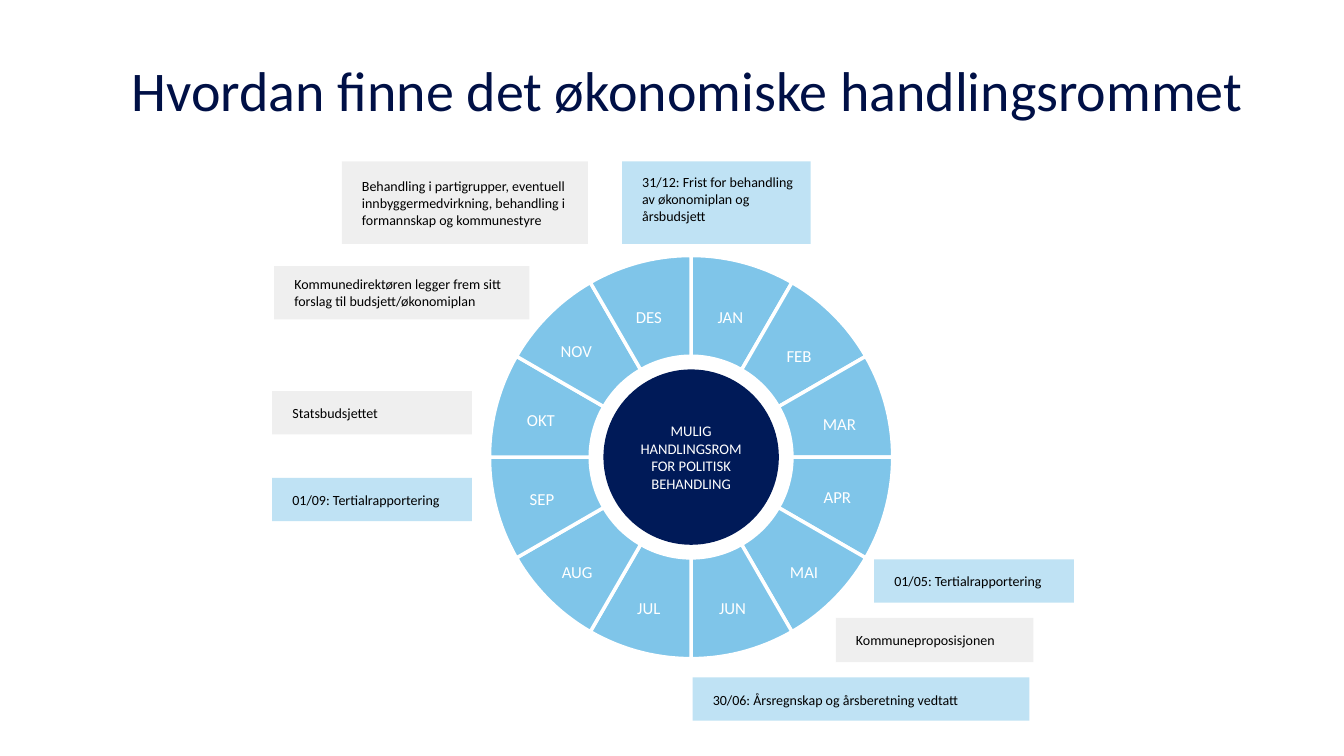
from math import cos, sin, radians

from lxml.etree import SubElement
from pptx import Presentation
from pptx.dml.color import RGBColor
from pptx.enum.shapes import MSO_SHAPE
from pptx.enum.text import MSO_ANCHOR, MSO_AUTO_SIZE, PP_ALIGN
from pptx.oxml.ns import qn
from pptx.util import Pt

PX = 9144  # 100 px to the inch
FONT = "Calibri"
COLORS = {
    "title": "001046", "core": "001A58", "wedge": "7FC5E9",
    "date": "BFE2F4", "step": "D9D9D9", "white": "FFFFFF", "black": "000000",
}

TITLE = "Hvordan finne det økonomiske handlingsrommet"
CORE = "MULIG HANDLINGSROM FOR POLITISK BEHANDLING"

# Month, left and top of its label, clockwise from the top of the wheel
MONTHS = [
    ("JAN", 687, 299), ("FEB", 755, 338), ("MAR", 795, 406),
    ("APR", 793, 478), ("MAI", 760, 552), ("JUN", 689, 588),
    ("JUL", 606, 588), ("AUG", 535, 552), ("SEP", 500, 480),
    ("OKT", 499, 402), ("NOV", 534, 333), ("DES", 606, 299),
]

# Text, fill, box, anchor, top inset, bottom inset
MID = (MSO_ANCHOR.MIDDLE, 5, 5)
NOTES = [
    ("01/05: Tertialrapportering", "date", (867, 555, 198, 43), MID),
    ("Statsbudsjettet", "step", (270, 388, 198, 43), MID),
    ("01/09: Tertialrapportering", "date", (270, 474, 198, 43), MID),
    ("31/12: Frist for behandling av økonomiplan og årsbudsjett",
     "date", (617, 160, 187, 82), (MSO_ANCHOR.TOP, 12, 5)),
    ("Kommunedirektøren legger frem sitt forslag til budsjett/økonomiplan",
     "step", (272, 264, 253, 53), MID),
    ("Behandling i partigrupper, eventuell innbyggermedvirkning, "
     "behandling i formannskap og kommunestyre",
     "step", (339, 160, 244, 82), MID),
    ("Kommuneproposisjonen", "step", (829, 613, 196, 44), MID),
    ("30/06: Årsregnskap og årsberetning vedtatt",
     "date", (687, 672, 334, 43), (MSO_ANCHOR.BOTTOM, 5, 12)),
]

HUB = (685.5, 453.5)
INNER, OUTER, DISC = 100, 200, 87
STEP = 360 // len(MONTHS)


def emu(*vals):
    return [round(v * PX) for v in vals]


def rgb(name):
    return RGBColor.from_string(COLORS[name])


def write(shape, text, size, color, align=PP_ALIGN.LEFT,
          anchor=MSO_ANCHOR.MIDDLE, inset=(10, 5, 10, 5), space=None,
          fit=MSO_AUTO_SIZE.NONE):
    """Put one formatted paragraph in a shape; inset is left, top, right, bottom."""
    frame = shape.text_frame
    frame.word_wrap = True
    frame.auto_size = fit
    frame.vertical_anchor = anchor
    (frame.margin_left, frame.margin_top,
     frame.margin_right, frame.margin_bottom) = emu(*inset)
    para = frame.paragraphs[0]
    para.alignment = align
    if space:
        para.line_spacing = space
    run = para.add_run()
    run.text = text
    run.font.name = FONT
    run.font.size = Pt(size)
    run.font.color.rgb = rgb(color)


def paint(shape, fill, line=None, alpha=None):
    shape.shadow.inherit = False
    shape.fill.solid()
    shape.fill.fore_color.rgb = rgb(fill)
    if alpha:
        tint = shape.fill._xPr.find(qn("a:solidFill"))[0]
        SubElement(tint, qn("a:alpha")).set("val", str(alpha * 1000))
    if line:
        shape.line.color.rgb = rgb(line)
        shape.line.width = Pt(2.5)
    else:
        shape.line.fill.background()


def spot(angle, radius):
    """Point on the wheel, angle clockwise from the top."""
    turn = radians(angle)
    return tuple(emu(HUB[0] + radius * sin(turn), HUB[1] - radius * cos(turn)))


def add_wedge(shapes, start):
    arc = range(start, start + STEP + 1, 2)
    points = [spot(a, OUTER) for a in arc]
    points += [spot(a, INNER) for a in reversed(arc)]
    form = shapes.build_freeform(*points[0], scale=1.0)
    form.add_line_segments(points[1:], close=True)
    paint(form.convert_to_shape(), "wedge", line="white")


def main():
    deck = Presentation()
    deck.slide_width, deck.slide_height = emu(1333, 750)
    slide = deck.slides.add_slide(deck.slide_layouts[5])
    shapes = slide.shapes

    title = shapes.title
    title.left, title.top, title.width, title.height = emu(59, 20, 1245, 145)
    write(title, TITLE, 40, "title", align=PP_ALIGN.CENTER, space=0.9)

    for text, fill, box, (anchor, top, bottom) in NOTES:
        note = shapes.add_shape(MSO_SHAPE.RECTANGLE, *emu(*box))
        paint(note, fill, alpha=40 if fill == "step" else None)
        write(note, text, 10, "black", anchor=anchor,
              inset=(20, top, 10, bottom))

    for i in range(len(MONTHS)):
        add_wedge(shapes, i * STEP)
    for month, left, top in MONTHS:
        label = shapes.add_textbox(*emu(left, top, 75, 22))
        write(label, month, 12, "white", align=PP_ALIGN.CENTER,
              anchor=MSO_ANCHOR.TOP, fit=MSO_AUTO_SIZE.SHAPE_TO_FIT_TEXT)

    core = shapes.add_shape(MSO_SHAPE.OVAL, *emu(
        HUB[0] - DISC, HUB[1] - DISC, 2 * DISC, 2 * DISC))
    paint(core, "core")
    write(core, CORE, 10.5, "white", align=PP_ALIGN.CENTER)

    deck.save("out.pptx")


if __name__ == "__main__":
    main()
